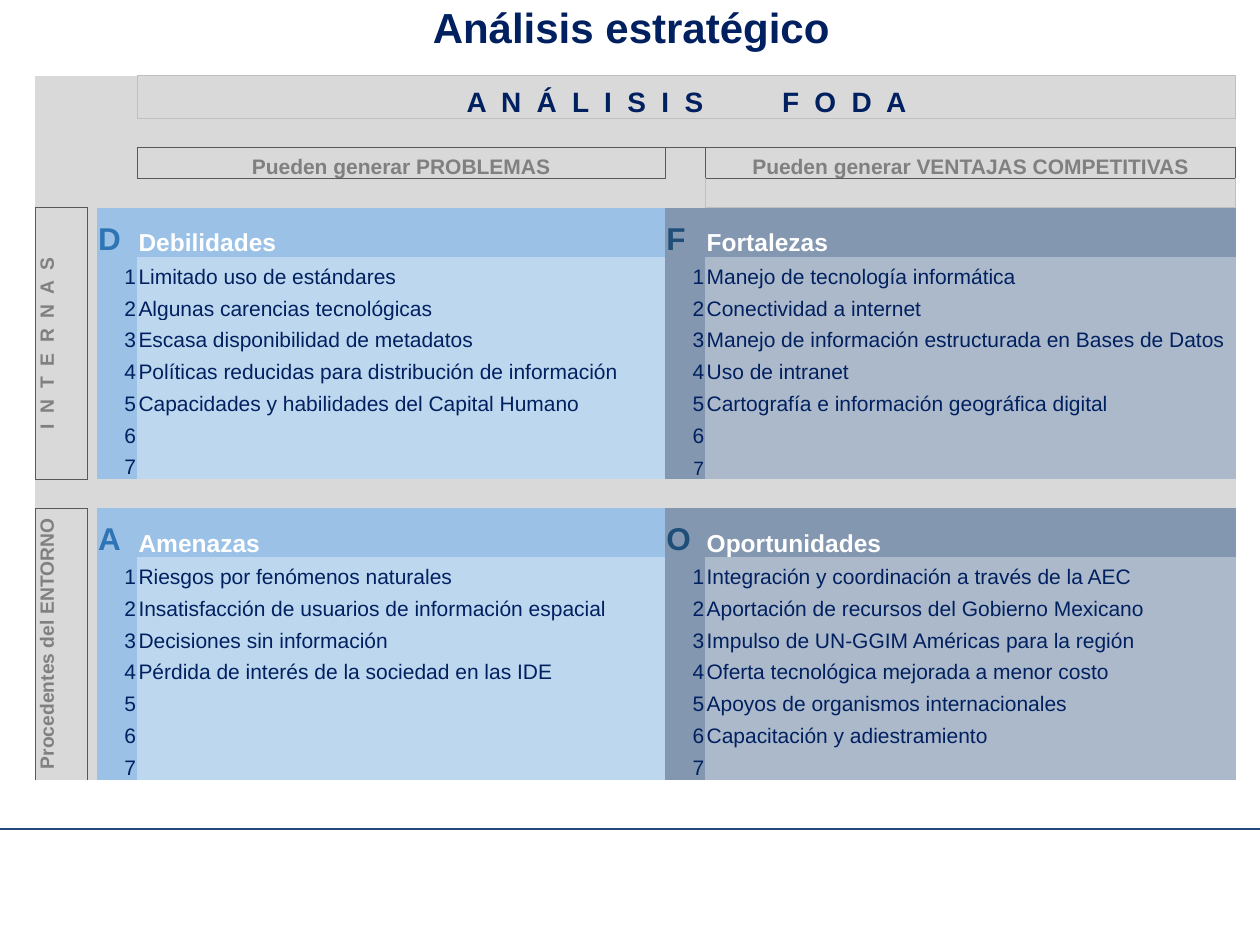
from lxml.etree import SubElement
from pptx import Presentation
from pptx.dml.color import RGBColor
from pptx.enum.shapes import MSO_CONNECTOR
from pptx.enum.text import MSO_ANCHOR as Anchor, PP_ALIGN as Align
from pptx.oxml import parse_xml
from pptx.oxml.ns import nsdecls, qn
from pptx.util import Inches, Pt

FONT = "Arial"
NAVY, GREY_TEXT, WHITE = "002060", "808080", "FFFFFF"
BACKGROUND, LIGHT_LINE, DARK_LINE = "D9D9D9", "BFBFBF", "595959"
NO_STYLE = "{2D5ABB26-0587-4C30-8999-92F81FD0307C}"

COLUMNS = [0.41, 0.08, 0.32, 4.19, 0.32, 4.21]
ITEM_COUNT = 7
HEADING_ROWS = [0.34, 0.23, 0.25, 0.23]
QUADRANT_TITLE, BAND_GAP = 0.39, 0.23
INTERNAL_ROW = len(HEADING_ROWS)
EXTERNAL_ROW = INTERNAL_ROW + ITEM_COUNT + 2

# Per side: first column, dark fill, light fill, letter colour
LEFT = (2, "9BC2E6", "BDD7EE", "2F75B5")
RIGHT = (4, "8497B0", "ACB9CA", "1F4E78")

QUADRANTS = [
    (INTERNAL_ROW, LEFT, "D", "Debilidades", [
        "Limitado uso de estándares",
        "Algunas carencias tecnológicas",
        "Escasa disponibilidad de metadatos",
        "Políticas reducidas para distribución de información",
        "Capacidades y habilidades del Capital Humano"]),
    (INTERNAL_ROW, RIGHT, "F", "Fortalezas", [
        "Manejo de tecnología informática",
        "Conectividad a internet",
        "Manejo de información estructurada en Bases de Datos",
        "Uso de intranet",
        "Cartografía e información geográfica digital"]),
    (EXTERNAL_ROW, LEFT, "A", "Amenazas", [
        "Riesgos por fenómenos naturales",
        "Insatisfacción de usuarios de información espacial",
        "Decisiones sin información",
        "Pérdida de interés de la sociedad en las IDE"]),
    (EXTERNAL_ROW, RIGHT, "O", "Oportunidades", [
        "Integración y coordinación a través de la AEC",
        "Aportación de recursos del Gobierno Mexicano",
        "Impulso de UN-GGIM Américas para la región",
        "Oferta tecnológica mejorada a menor costo",
        "Apoyos de organismos internacionales",
        "Capacitación y adiestramiento"]),
]


def rgb(colour):
    return RGBColor.from_string(colour)


def add_run(paragraph, text, size, colour, bold=False, spacing=0):
    """Add a run; spacing is the extra space after each character in points."""
    run = paragraph.add_run()
    run.text = text
    font = run.font
    font.name, font.size, font.bold = FONT, Pt(size), bold
    font.color.rgb = rgb(colour)
    if spacing:
        font._element.set("spc", str(round(spacing * 100)))


def fill_cell(cell, colour):
    cell.fill.solid()
    cell.fill.fore_color.rgb = rgb(colour)


def write_cell(cell, text, size, colour, bold=False, align=Align.LEFT, spacing=0):
    paragraph = cell.text_frame.paragraphs[0]
    paragraph.alignment = align
    add_run(paragraph, text, size, colour, bold, spacing)
    return paragraph


def outline(table, first, last, colour, sides="LRTB"):
    """Draw the chosen sides round a block of cells, given as (row, column) corners."""
    for row in range(first[0], last[0] + 1):
        for column in range(first[1], last[1] + 1):
            at_origin = (row, column) == first
            on_edge = {"L": column == first[1], "R": column == last[1],
                       "T": row == first[0], "B": row == last[0]}
            edges = [side for side in sides if at_origin or on_edge[side]]
            properties = table.cell(row, column)._tc.get_or_add_tcPr()
            for position, side in enumerate(edges):
                properties.insert(position, parse_xml(
                    f'<a:ln{side} {nsdecls("a")} w="{Pt(0.5)}"><a:solidFill>'
                    f'<a:srgbClr val="{colour}"/></a:solidFill></a:ln{side}>'))


def prepare_cells(table):
    """Give every cell the grey fill, tight margins and a small empty line."""
    for cell in table.iter_cells():
        fill_cell(cell, BACKGROUND)
        cell.margin_left = cell.margin_right = cell.margin_top = Inches(0.01)
        cell.margin_bottom = 0
        cell.vertical_anchor = Anchor.BOTTOM
        paragraph = cell.text_frame.paragraphs[0]
        SubElement(paragraph._p, qn("a:endParaRPr"), sz="1200")


def add_headings(table):
    for row in (0, 1):
        table.cell(row, 3).merge(table.cell(row, 5))
    heading = write_cell(table.cell(0, 3), "A N Á L I S I S", 16, NAVY, True,
                         Align.CENTER, 2.2)
    add_run(heading, " ", 16, NAVY, True, 38)
    add_run(heading, "F O D A", 16, NAVY, True, 2.2)
    outline(table, (0, 3), (0, 5), LIGHT_LINE)
    for column, text in ((3, "Pueden generar PROBLEMAS"),
                         (5, "Pueden generar VENTAJAS COMPETITIVAS")):
        write_cell(table.cell(2, column), text, 12, GREY_TEXT, True, Align.CENTER)
        outline(table, (2, column), (2, column), DARK_LINE)
    outline(table, (3, 5), (3, 5), LIGHT_LINE, "LRB")


def add_side_label(table, row, text, spacing, sides):
    last_row = row + ITEM_COUNT
    cell = table.cell(row, 0)
    cell.merge(table.cell(last_row, 0))
    write_cell(cell, text, 11, GREY_TEXT, True, Align.CENTER, spacing)
    cell.vertical_anchor = Anchor.MIDDLE
    cell._tc.get_or_add_tcPr().set("vert", "vert270")
    outline(table, (row, 0), (last_row, 0), DARK_LINE, sides)


def add_quadrant(table, row, side, letter, title, items):
    column, dark, light, letter_colour = side
    for offset in range(ITEM_COUNT + 1):
        number_cell = table.cell(row + offset, column)
        item_cell = table.cell(row + offset, column + 1)
        fill_cell(number_cell, dark)
        fill_cell(item_cell, light if offset else dark)
        if offset == 0:
            write_cell(number_cell, letter, 18, letter_colour, True)
            write_cell(item_cell, title, 14, WHITE, True)
            continue
        size = 11 if (letter, offset) == ("F", ITEM_COUNT) else 12
        write_cell(number_cell, str(offset), size, NAVY, align=Align.RIGHT)
        if offset <= len(items):
            write_cell(item_cell, items[offset - 1], 12, NAVY)


def add_swot_table(slide, left, top, width, height):
    fixed = sum(HEADING_ROWS) + 2 * QUADRANT_TITLE + BAND_GAP
    item_height = (height - fixed) / (2 * ITEM_COUNT)
    band = [QUADRANT_TITLE] + [item_height] * ITEM_COUNT
    rows = HEADING_ROWS + band + [BAND_GAP] + band
    frame = slide.shapes.add_table(len(rows), len(COLUMNS), Inches(left), Inches(top),
                                   Inches(width), Inches(height))
    table = frame.table
    table.first_row = table.horz_banding = False
    table._tbl.tblPr.find(qn("a:tableStyleId")).text = NO_STYLE
    for column, column_width in zip(table.columns, COLUMNS):
        column.width = Inches(column_width)
    for row, row_height in zip(table.rows, rows):
        row.height = Inches(row_height)
    prepare_cells(table)
    add_headings(table)
    add_side_label(table, INTERNAL_ROW, "I N T E R N A S", 1.5, "LRTB")
    add_side_label(table, EXTERNAL_ROW, "Procedentes del ENTORNO", 0, "LRT")
    for quadrant in QUADRANTS:
        add_quadrant(table, *quadrant)


def add_title(slide, left, top, width, height):
    box = slide.shapes.add_textbox(Inches(left), Inches(top), Inches(width), Inches(height))
    frame = box.text_frame
    frame.word_wrap = True
    frame.vertical_anchor = Anchor.MIDDLE
    frame.margin_top = frame.margin_bottom = 0
    paragraph = frame.paragraphs[0]
    paragraph.alignment = Align.CENTER
    add_run(paragraph, "Análisis estratégico", 24, NAVY, True)


def add_footer_line(slide, left, top, width):
    line = slide.shapes.add_connector(MSO_CONNECTOR.STRAIGHT, Inches(left), Inches(top),
                                      Inches(left + width), Inches(top))
    line.line.color.rgb = rgb("1F497D")
    line.line.width = Pt(0.75)
    SubElement(line._element.spPr, qn("a:effectLst"))


def main():
    presentation = Presentation()
    presentation.slide_width, presentation.slide_height = Inches(10), Inches(7.5)
    slide = presentation.slides.add_slide(presentation.slide_layouts[6])
    add_footer_line(slide, 0, 6.58, 10)
    add_title(slide, 0.51, 0.02, 9, 0.38)
    add_swot_table(slide, 0.28, 0.6, 9.53, 5.59)
    presentation.save("out.pptx")


if __name__ == "__main__":
    main()
